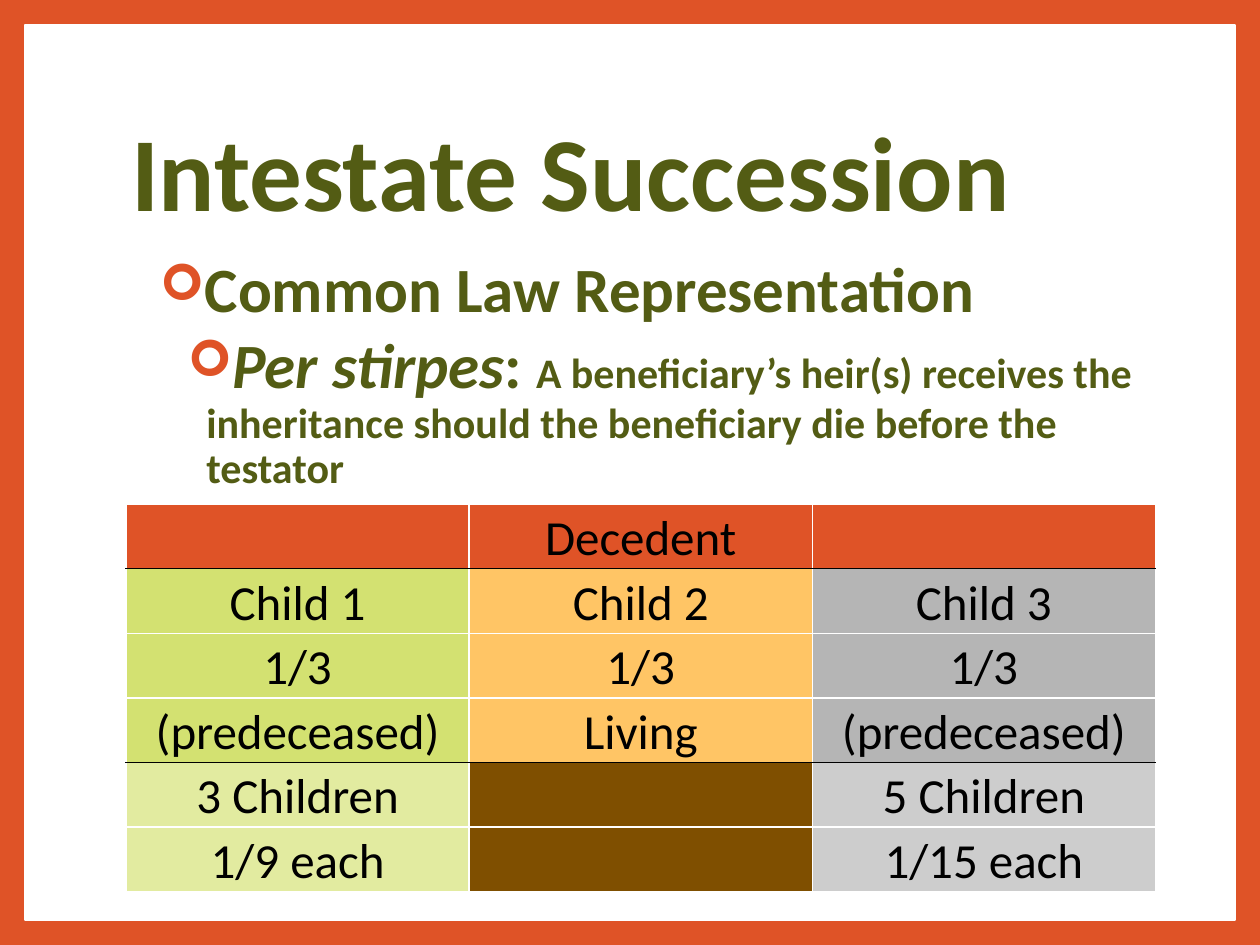
"""Build the Intestate Succession slide with its table of shares."""
import pptx
import pptx.util
import pptx.dml.color
import pptx.enum.shapes
import pptx.enum.text
import pptx.oxml
import pptx.oxml.ns
import lxml.etree

Inches, Pt = pptx.util.Inches, pptx.util.Pt
PP_ALIGN, MSO_ANCHOR = pptx.enum.text.PP_ALIGN, pptx.enum.text.MSO_ANCHOR
NS = pptx.oxml.ns.nsdecls("a")
COLORS = {
    "frame": "DF5327", "white": "FFFFFF", "black": "000000", "olive": "535C14",
    "lime": "D3E171", "amber": "FFC565", "gray": "B5B5B5",
    "pale_lime": "E2EBA0", "brown": "7F4F00", "pale_gray": "CDCDCD",
}


def rgb(name):
    return pptx.dml.color.RGBColor.from_string(COLORS[name])


def style(r, size, color, bold=False, italic=False):
    r.font.name = "Calibri"
    r.font.size = Pt(size)
    r.font.color.rgb = rgb(color)
    r.font.bold = bold
    r.font.italic = italic


prs = pptx.Presentation()
prs.slide_width, prs.slide_height = Inches(10), Inches(7.5)
s = prs.slides.add_slide(prs.slide_layouts[5])
s.background.fill.solid()
s.background.fill.fore_color.rgb = rgb("frame")

margin = Inches(0.2)
panel = s.shapes.add_shape(
    pptx.enum.shapes.MSO_SHAPE.RECTANGLE, margin, margin,
    prs.slide_width - 2 * margin, prs.slide_height - 2 * margin)
panel.shadow.inherit = False
panel.fill.solid()
panel.fill.fore_color.rgb = rgb("white")
panel.line.color.rgb = rgb("white")
panel.line.width = Pt(1)
s.shapes._spTree.remove(panel._element)
s.shapes._spTree.insert(2, panel._element)

title = s.shapes.title
title.left, title.top = Inches(0.94), Inches(0.67)
title.width, title.height = Inches(8.1), Inches(1.48)
tf = title.text_frame
tf.text = "Intestate Succession"
tf.word_wrap = True
tf.auto_size = pptx.enum.text.MSO_AUTO_SIZE.NONE
tf.vertical_anchor = MSO_ANCHOR.MIDDLE
p = tf.paragraphs[0]
p.alignment = PP_ALIGN.LEFT
p.line_spacing = 0.9
style(p.runs[0], 60, "olive", bold=True)

points = [
    (0.38, [("Common Law Representation", 36, False)]),
    (0.6, [("Per stirpes", 36, True), (": ", 36, False),
           ("A beneficiary’s heir(s) receives the inheritance should the "
            "beneficiary die before the testator", 24, False)]),
]
body = s.shapes.add_textbox(Inches(0.94), Inches(2), Inches(8.56), Inches(2))
tf = body.text_frame
tf.word_wrap = True
for i, (indent, runs) in enumerate(points):
    p = tf.add_paragraph() if i else tf.paragraphs[0]
    p.level = i + 1
    p.line_spacing = 0.9
    p.space_before, p.space_after = Pt(1.5), Pt(3)
    for text, size, italic in runs:
        r = p.add_run()
        r.text = text
        style(r, size, "olive", bold=True, italic=italic)
    pPr = p._p.get_or_add_pPr()
    pPr.set("marL", str(Inches(indent)))
    pPr.set("indent", str(Inches(-0.15)))
    for xml in (
        f'<a:buClr {NS}><a:srgbClr val="{COLORS["frame"]}"/></a:buClr>',
        f'<a:buSzPct {NS} val="80000"/>',
        f'<a:buFont {NS} typeface="Wingdings"/>',
        f'<a:buChar {NS} char="➢"/>',
    ):
        pPr.append(pptx.oxml.parse_xml(xml))

rows = [
    ["", "Decedent", ""],
    ["Child 1", "Child 2", "Child 3"],
    ["1/3"] * 3,
    ["(predeceased)", "Living", "(predeceased)"],
    ["3 Children", "", "5 Children"],
    ["1/9 each", "", "1/15 each"],
]
child_fills = ["lime", "amber", "gray"]
heir_fills = ["pale_lime", "brown", "pale_gray"]
fills = [["frame"] * 3] + [child_fills] * 3 + [heir_fills] * 2
ruled_below = (0, 3)

frame = s.shapes.add_table(len(rows), 3, Inches(1), Inches(4), Inches(8.17), Inches(3.08))
table = frame.table
for i, row in enumerate(rows):
    for j, text in enumerate(row):
        cell = table.cell(i, j)
        cell.text = text
        cell.vertical_anchor = MSO_ANCHOR.BOTTOM
        cell.margin_left = cell.margin_right = cell.margin_top = Inches(0.01)
        cell.margin_bottom = 0
        cell.fill.solid()
        cell.fill.fore_color.rgb = rgb(fills[i][j])
        p = cell.text_frame.paragraphs[0]
        p.alignment = PP_ALIGN.CENTER
        for r in p.runs:
            style(r, 28, "black")
        edges = {
            "L": "white", "R": "white",
            "T": "black" if i - 1 in ruled_below else "white",
            "B": "black" if i in ruled_below else "white",
        }
        tcPr = cell._tc.get_or_add_tcPr()
        for k, (side, color) in enumerate(edges.items()):
            tcPr.insert(k, pptx.oxml.parse_xml(
                f'<a:ln{side} {NS} w="{Pt(1)}"><a:solidFill>'
                f'<a:srgbClr val="{COLORS[color]}"/></a:solidFill></a:ln{side}>'))

prs.save("out.pptx")
